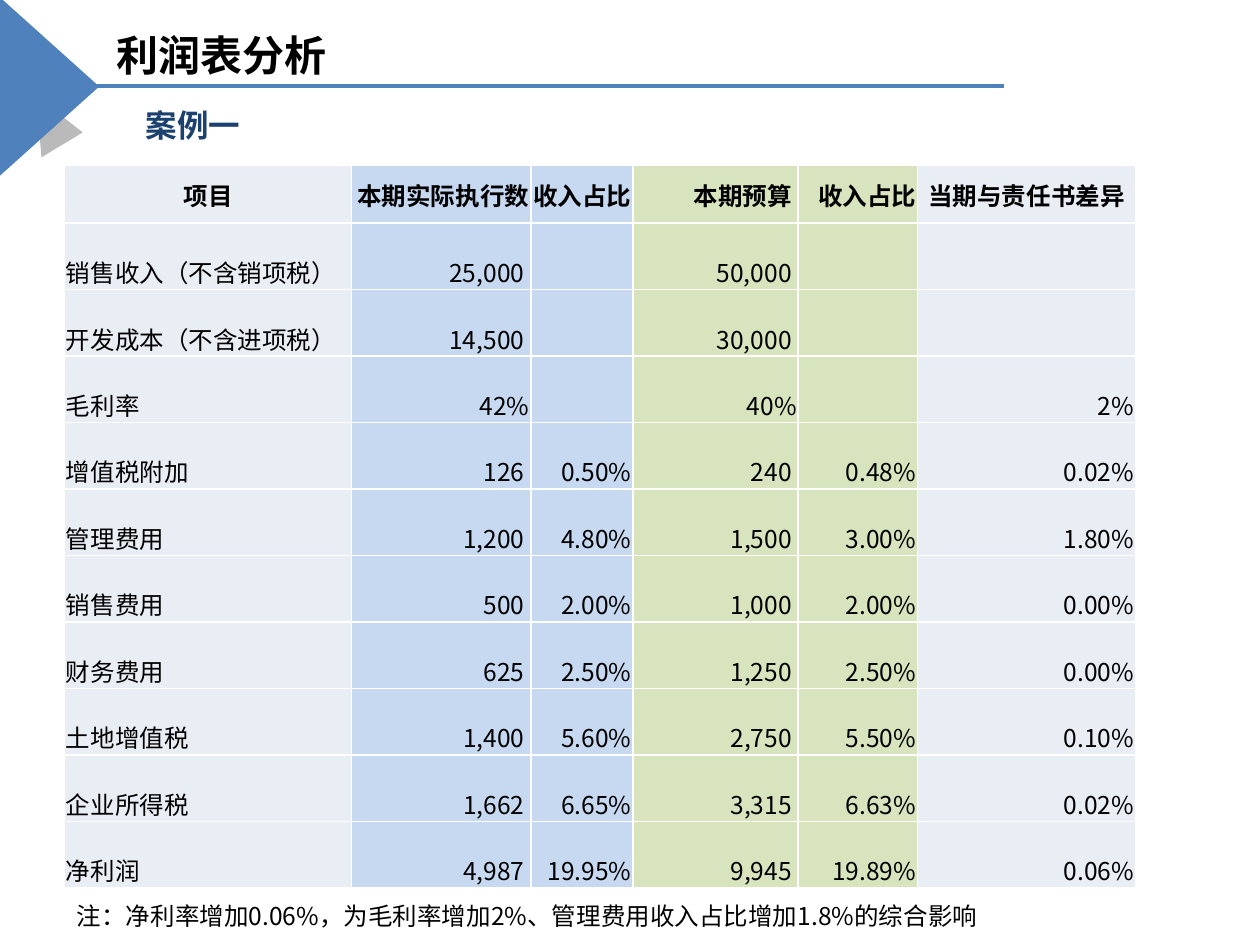
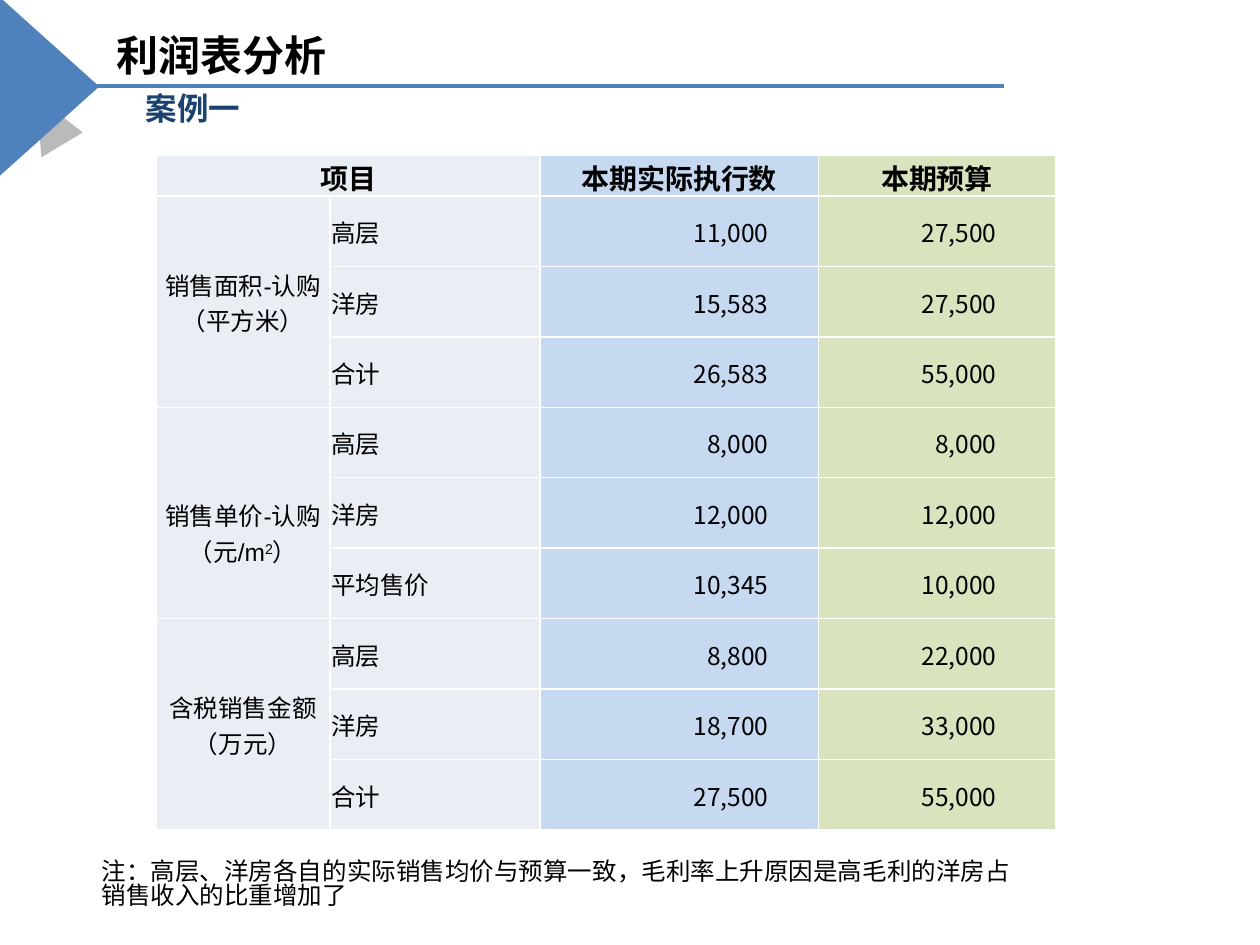
from dataclasses import dataclass

from lxml.etree import SubElement
from pptx import Presentation
from pptx.dml.color import RGBColor
from pptx.enum.shapes import MSO_CONNECTOR, MSO_SHAPE
from pptx.enum.text import MSO_ANCHOR, MSO_AUTO_SIZE, PP_ALIGN
from pptx.oxml.ns import qn
from pptx.util import Cm, Pt

WHITE = RGBColor(0xFF, 0xFF, 0xFF)
BLACK = RGBColor(0x00, 0x00, 0x00)
GREY = RGBColor(0x40, 0x40, 0x40)
BLUE = RGBColor(0x4F, 0x81, 0xBD)
NAVY = RGBColor(0x1B, 0x41, 0x6F)
LABEL_FILL = RGBColor(0xE9, 0xED, 0xF4)
ACTUAL_FILL = RGBColor(0xC6, 0xD9, 0xF1)
BUDGET_FILL = RGBColor(0xD7, 0xE4, 0xBD)

LATIN = "Arial"
CJK = "Noto Sans CJK SC"
LEFT, CENTER, RIGHT = PP_ALIGN.LEFT, PP_ALIGN.CENTER, PP_ALIGN.RIGHT
CELL_INSET = 0.03


@dataclass
class Column:
    title: str
    width: float
    fill: RGBColor
    align: PP_ALIGN = RIGHT
    head_align: PP_ALIGN = CENTER
    inset: float = CELL_INSET
    head_inset: float = CELL_INSET
    font: str = CJK


@dataclass
class Grid:
    left: float
    top: float
    head_height: float
    row_height: float
    head_size: int
    anchor: MSO_ANCHOR
    columns: list[Column]
    rows: list[tuple[str, ...]]


@dataclass
class Triangle:
    left: float
    top: float
    width: float
    height: float
    rotation: float
    peak: float
    color: RGBColor
    opacity: int


TRIANGLES = [
    Triangle(0.48, 1.88, 0.97, 1.12, 329, 0.56, GREY, 36),
    Triangle(-0.81, 0.74, 3.61, 2.01, 90, 0.5, BLUE, 100),
]

PROFIT = Grid(
    1.3, 3.34, 1.16, 1.34, 14, MSO_ANCHOR.BOTTOM,
    [
        Column("项目", 5.79, LABEL_FILL, LEFT, font=LATIN),
        Column("本期实际执行数", 3.61, ACTUAL_FILL, head_align=RIGHT, inset=0.13),
        Column("收入占比", 2.06, ACTUAL_FILL, head_align=RIGHT),
        Column("本期预算", 3.33, BUDGET_FILL, head_align=RIGHT, inset=0.13, head_inset=0.13),
        Column("收入占比", 2.41, BUDGET_FILL, head_align=RIGHT),
        Column("当期与责任书差异", 4.39, LABEL_FILL),
    ],
    [
        ("销售收入（不含销项税）", "25,000", "", "50,000", "", ""),
        ("开发成本（不含进项税）", "14,500", "", "30,000", "", ""),
        ("毛利率", "42%", "", "40%", "", "2%"),
        ("增值税附加", "126", "0.50%", "240", "0.48%", "0.02%"),
        ("管理费用", "1,200", "4.80%", "1,500", "3.00%", "1.80%"),
        ("销售费用", "500", "2.00%", "1,000", "2.00%", "0.00%"),
        ("财务费用", "625", "2.50%", "1,250", "2.50%", "0.00%"),
        ("土地增值税", "1,400", "5.60%", "2,750", "5.50%", "0.10%"),
        ("企业所得税", "1,662", "6.65%", "3,315", "6.63%", "0.02%"),
        ("净利润", "4,987", "19.95%", "9,945", "19.89%", "0.06%"),
    ],
)

SALES = Grid(
    3.15, 3.13, 0.82, 1.42, 16, MSO_ANCHOR.MIDDLE,
    [
        Column("项目", 3.5, LABEL_FILL, CENTER, font=LATIN),
        Column("", 4.24, LABEL_FILL, LEFT, font=LATIN),
        Column("本期实际执行数", 5.61, ACTUAL_FILL, inset=1.01),
        Column("本期预算", 4.78, BUDGET_FILL, inset=1.19),
    ],
    [
        ("销售面积-认购\n（平方米）", "高层", "11,000", "27,500"),
        ("", "洋房", "15,583", "27,500"),
        ("", "合计", "26,583", "55,000"),
        ("销售单价-认购\n（元/m^2^）", "高层", "8,000", "8,000"),
        ("", "洋房", "12,000", "12,000"),
        ("", "平均售价", "10,345", "10,000"),
        ("含税销售金额（万元）", "高层", "8,800", "22,000"),
        ("", "洋房", "18,700", "33,000"),
        ("", "合计", "27,500", "55,000"),
    ],
)


def write(tf, text: str, *, size: int = 14, font: str = CJK, color: RGBColor = BLACK,
          bold: bool = False, align: PP_ALIGN = LEFT, spacing: float = 1.0) -> None:
    p = tf.paragraphs[0]
    p.alignment = align
    p.line_spacing = spacing
    for i, line in enumerate(text.split("\n")):
        if i:
            p.add_line_break()
        for j, part in enumerate(line.split("^")):
            r = p.add_run()
            r.text = part
            r.font.size = Pt(size)
            r.font.name = font
            r.font.bold = bold
            r.font.color.rgb = color
            rpr = r.font._element
            SubElement(rpr, qn("a:ea")).set("typeface", CJK)
            if j % 2:
                rpr.set("baseline", "30000")


def add_note(slide, left: float, top: float, width: float, height: float, text: str) -> None:
    tf = slide.shapes.add_textbox(Cm(left), Cm(top), Cm(width), Cm(height)).text_frame
    tf.word_wrap = True
    write(tf, text, spacing=0.84)


def add_triangle(slide, t: Triangle) -> None:
    sp = slide.shapes.add_shape(MSO_SHAPE.ISOSCELES_TRIANGLE, Cm(t.left), Cm(t.top),
                                Cm(t.width), Cm(t.height))
    sp.adjustments[0] = t.peak
    sp.rotation = t.rotation
    sp.shadow.inherit = False
    sp.line.fill.background()
    sp.fill.solid()
    sp.fill.fore_color.rgb = t.color
    if t.opacity < 100:
        rgb = sp._element.spPr.find(".//" + qn("a:srgbClr"))
        SubElement(rgb, qn("a:alpha")).set("val", str(t.opacity * 1000))


def add_slide(prs, subtitle_top: float):
    slide = prs.slides.add_slide(prs.slide_layouts[5])
    slide.background.fill.solid()
    slide.background.fill.fore_color.rgb = WHITE
    for triangle in TRIANGLES:
        add_triangle(slide, triangle)
    rule = slide.shapes.add_connector(MSO_CONNECTOR.STRAIGHT, Cm(1.96), Cm(1.73),
                                      Cm(20.24), Cm(1.73))
    rule.line.color.rgb = BLUE
    rule.line.width = Pt(2)
    SubElement(rule._element.spPr, qn("a:effectLst"))

    title = slide.shapes.title
    title.left, title.top, title.width, title.height = Cm(2.16), Cm(0.5), Cm(20.12), Cm(1.22)
    tf = title.text_frame
    tf.auto_size = MSO_AUTO_SIZE.NONE
    tf.vertical_anchor = MSO_ANCHOR.MIDDLE
    tf.margin_left = tf.margin_right = Cm(0.18)
    tf.margin_top = tf.margin_bottom = Cm(0.1)
    write(tf, "利润表分析", size=24, bold=True)

    tf = slide.shapes.add_textbox(Cm(2.69), Cm(subtitle_top), Cm(4.98), Cm(0.61)).text_frame
    tf.word_wrap = True
    tf.vertical_anchor = MSO_ANCHOR.MIDDLE
    tf.margin_top = tf.margin_bottom = 0
    write(tf, "案例一", size=18, color=NAVY, bold=True)
    return slide


def style_cell(cell, fill: RGBColor, anchor: MSO_ANCHOR, inset: float) -> None:
    cell.margin_left = cell.margin_top = Cm(CELL_INSET)
    cell.margin_right = Cm(inset)
    cell.margin_bottom = 0
    cell.vertical_anchor = anchor
    tc_pr = cell._tc.get_or_add_tcPr()
    for side in ("lnL", "lnR", "lnT", "lnB"):
        ln = SubElement(tc_pr, qn(f"a:{side}"), w=str(Pt(1)))
        SubElement(SubElement(ln, qn("a:solidFill")), qn("a:srgbClr"), val=str(WHITE))
    cell.fill.solid()
    cell.fill.fore_color.rgb = fill


def add_grid(slide, grid: Grid):
    count = len(grid.rows)
    width = sum(c.width for c in grid.columns)
    height = grid.head_height + count * grid.row_height
    table = slide.shapes.add_table(count + 1, len(grid.columns), Cm(grid.left), Cm(grid.top),
                                   Cm(width), Cm(height)).table
    table.first_row = table.horz_banding = False
    for i, row in enumerate(table.rows):
        row.height = Cm(grid.row_height if i else grid.head_height)
    for j, col in enumerate(grid.columns):
        table.columns[j].width = Cm(col.width)
        head = table.cell(0, j)
        style_cell(head, col.fill, MSO_ANCHOR.MIDDLE, col.head_inset)
        if col.title:
            write(head.text_frame, col.title, size=grid.head_size, font=LATIN, bold=True,
                  align=col.head_align)
        for i, values in enumerate(grid.rows, 1):
            text = values[j]
            cell = table.cell(i, j)
            style_cell(cell, col.fill, grid.anchor,
                       CELL_INSET if text.endswith("%") else col.inset)
            if text:
                write(cell.text_frame, text, font=col.font, align=col.align)
    return table


def build_profit(prs) -> None:
    slide = add_slide(prs, 2.21)
    add_grid(slide, PROFIT)
    add_note(slide, 1.3, 18.14, 21.21, 0.86,
             "注：净利率增加0.06%，为毛利率增加2%、管理费用收入占比增加1.8%的综合影响")


def build_sales(prs) -> None:
    slide = add_slide(prs, 1.88)
    table = add_grid(slide, SALES)
    table.cell(0, 0).merge(table.cell(0, 1))
    for first in range(1, len(SALES.rows), 3):
        table.cell(first, 0).merge(table.cell(first + 2, 0))
    table.cell(4, 0).margin_top = Cm(0.8)
    add_note(slide, 1.8, 17.22, 18.9, 1.45,
             "注：高层、洋房各自的实际销售均价与预算一致，毛利率上升原因是高毛利的洋房占销售收入的比重增加了")


def main() -> None:
    prs = Presentation()
    prs.slide_width, prs.slide_height = Cm(25.4), Cm(19.05)
    build_profit(prs)
    build_sales(prs)
    prs.save("out.pptx")


if __name__ == "__main__":
    main()
